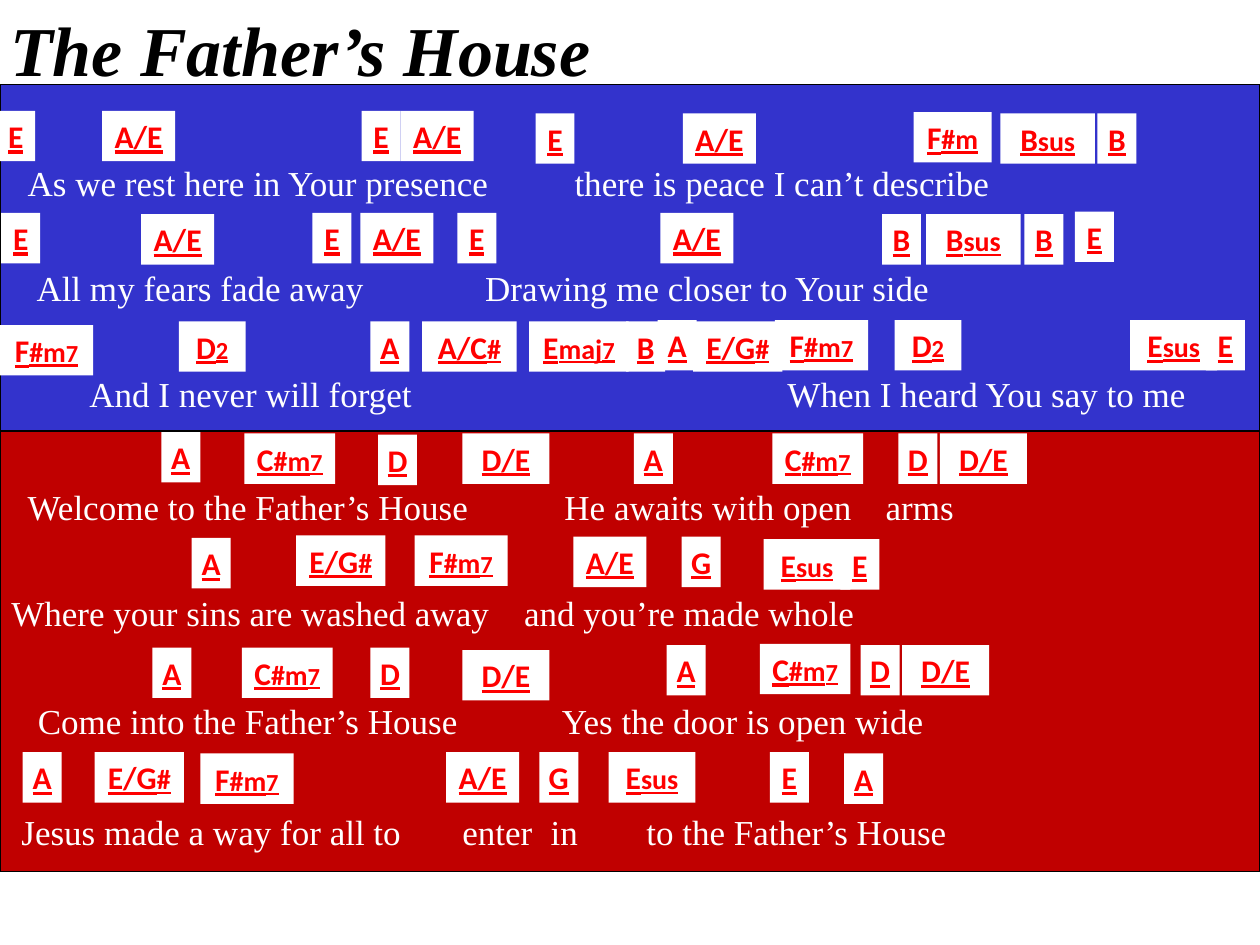
"""Build a song slide with lyric lines and chord labels above them."""
import itertools

import pptx
import pptx.dml.color
import pptx.enum.shapes
import pptx.enum.text
import pptx.oxml.ns
import pptx.util
from lxml import etree

Inches = pptx.util.Inches
Pt = pptx.util.Pt
ALIGN = pptx.enum.text.PP_ALIGN
ANCHOR = pptx.enum.text.MSO_ANCHOR
RECT = pptx.enum.shapes.MSO_SHAPE.RECTANGLE
COLORS = {"white": "FFFFFF", "black": "000000", "verse": "3333CC", "chorus": "C00000", "chord": "FF0000"}
RGB = {name: pptx.dml.color.RGBColor.from_string(value) for name, value in COLORS.items()}

TITLE_FONT = {"name": "Times New Roman", "size": Pt(40), "bold": True, "italic": True}
LYRIC_FONT = {"name": "Times New Roman", "size": Pt(20)}
CHORD_FONT = {"name": "Calibri", "bold": True, "underline": True}
CHORD_WIDTHS = {
    "A/E": 0.58, "D/E": 0.69, "E/G#": 0.71, "A/C#": 0.75, "D2": 0.53, "F#m": 0.62,
    "F#m7": 0.74, "C#m7": 0.72, "Emaj7": 0.79, "Esus": 0.69, "Bsus": 0.75,
}
LYRICS = [
    (1.23, [(0.22, "As we rest here in Your presence"), (4.56, "there is peace I can’t describe")]),
    (2.06, [(0.29, "All my fears fade away"), (3.85, "Drawing me closer to Your side")]),
    (2.9, [(0.71, "And I never will forget"), (6.25, "When I heard You say to me")]),
    (3.8, [(0.22, "Welcome to the Father’s House"), (4.48, "He awaits with open"), (7.03, "arms")]),
    (4.64, [(0.09, "Where your sins are washed away"), (4.16, "and you’re made whole")]),
    (5.5, [(0.3, "Come into the Father’s House"), (4.46, "Yes the door is open wide")]),
    (6.38, [(0.17, "Jesus made a way for all to"), (3.67, "enter"), (4.37, "in"), (5.13, "to the Father’s House")]),
]
CHORDS = [
    ("E", -0.03, 0.88), ("A/E", 0.81, 0.88), ("E", 2.87, 0.88), ("A/E", 3.18, 0.88), ("E", 4.25, 0.9),
    ("A/E", 5.42, 0.9), ("F#m", 7.25, 0.89), ("Bsus", 7.94, 0.9), ("B", 8.71, 0.9),
    ("E", 0.01, 1.69), ("A/E", 1.12, 1.7), ("E", 2.48, 1.69), ("A/E", 2.86, 1.69), ("E", 3.63, 1.69),
    ("A/E", 5.24, 1.69), ("B", 7, 1.7), ("Bsus", 7.35, 1.7), ("B", 8.13, 1.7), ("E", 8.53, 1.68),
    ("F#m7", 0, 2.58), ("D2", 1.42, 2.55), ("A", 2.94, 2.55), ("A/C#", 3.35, 2.55), ("Emaj7", 4.2, 2.55),
    ("B", 4.97, 2.55), ("A", 5.22, 2.54), ("E/G#", 5.5, 2.55), ("F#m7", 6.15, 2.54), ("D2", 7.1, 2.54),
    ("Esus", 8.97, 2.54), ("E", 9.57, 2.54),
    ("A", 1.28, 3.43), ("C#m7", 1.94, 3.44), ("D", 3, 3.45), ("D/E", 3.67, 3.44), ("A", 5.03, 3.44),
    ("C#m7", 6.13, 3.44), ("D", 7.13, 3.44), ("D/E", 7.46, 3.44),
    ("A", 1.52, 4.27), ("E/G#", 2.35, 4.25), ("F#m7", 3.29, 4.25), ("A/E", 4.55, 4.26), ("G", 5.41, 4.26),
    ("Esus", 6.06, 4.28), ("E", 6.67, 4.28),
    ("A", 1.21, 5.14), ("C#m7", 1.92, 5.14), ("D", 2.94, 5.14), ("D/E", 3.67, 5.16), ("A", 5.29, 5.12),
    ("C#m7", 6.03, 5.11), ("D", 6.83, 5.12), ("D/E", 7.16, 5.12),
    ("A", 0.18, 5.97), ("E/G#", 0.75, 5.97), ("F#m7", 1.59, 5.98), ("A/E", 3.54, 5.97), ("G", 4.28, 5.97),
    ("Esus", 4.83, 5.97), ("E", 6.11, 5.97), ("A", 6.7, 5.98),
]


def add_run(p, text, color, font):
    r = p.add_run()
    r.text = text
    r.font.color.rgb = RGB[color]
    for name, value in font.items():
        setattr(r.font, name, value)


def chord_size(char):
    if char.isdigit():
        return 14
    return 16 if char == "#" or char.islower() else 18


prs = pptx.Presentation()
prs.slide_width, prs.slide_height = Inches(10), Inches(7.5)
s = prs.slides.add_slide(prs.slide_layouts[5])

title = s.shapes.title
title.left, title.top, title.width, title.height = Inches(-0.02), Inches(0), Inches(7.61), Inches(0.77)
title.fill.solid()
title.fill.fore_color.rgb = RGB["white"]
tf = title.text_frame
tf.auto_size = pptx.enum.text.MSO_AUTO_SIZE.NONE
tf.vertical_anchor = ANCHOR.MIDDLE
tf.paragraphs[0].alignment = ALIGN.LEFT
add_run(tf.paragraphs[0], "The Father’s House", "black", TITLE_FONT)

for color, top, height in [("verse", 0.67, 2.75), ("chorus", 3.42, 3.5)]:
    sp = s.shapes.add_shape(RECT, Inches(0), Inches(top), Inches(10), Inches(height))
    sp.shadow.inherit = False
    sp.fill.solid()
    sp.fill.fore_color.rgb = RGB[color]
    sp.line.color.rgb = RGB["black"]
    sp.line.width = Pt(0.75)

for top, phrases in LYRICS:
    start = phrases[0][0]
    tf = s.shapes.add_textbox(Inches(0), Inches(top), Inches(10), Inches(0.44)).text_frame
    tf.word_wrap = True
    tf.vertical_anchor = ANCHOR.MIDDLE
    tf.margin_left = Inches(start)
    p = tf.paragraphs[0]
    add_run(p, "\t".join(text for _, text in phrases), "white", LYRIC_FONT)
    tabs = etree.SubElement(p._p.get_or_add_pPr(), pptx.oxml.ns.qn("a:tabLst"))
    for left, _ in phrases[1:]:
        etree.SubElement(tabs, pptx.oxml.ns.qn("a:tab"), pos=str(Inches(left - start)), algn="l")

for chord, left, top in CHORDS:
    width = CHORD_WIDTHS.get(chord, 0.31)
    sp = s.shapes.add_shape(RECT, Inches(left), Inches(top), Inches(width), Inches(0.4))
    sp.shadow.inherit = False
    sp.fill.solid()
    sp.fill.fore_color.rgb = RGB["white"]
    sp.line.fill.background()
    tf = sp.text_frame
    tf.word_wrap = False
    tf.vertical_anchor = ANCHOR.MIDDLE
    p = tf.paragraphs[0]
    p.alignment = ALIGN.CENTER
    for size, chars in itertools.groupby(chord, chord_size):
        add_run(p, "".join(chars), "chord", {**CHORD_FONT, "size": Pt(size)})

prs.save("out.pptx")
